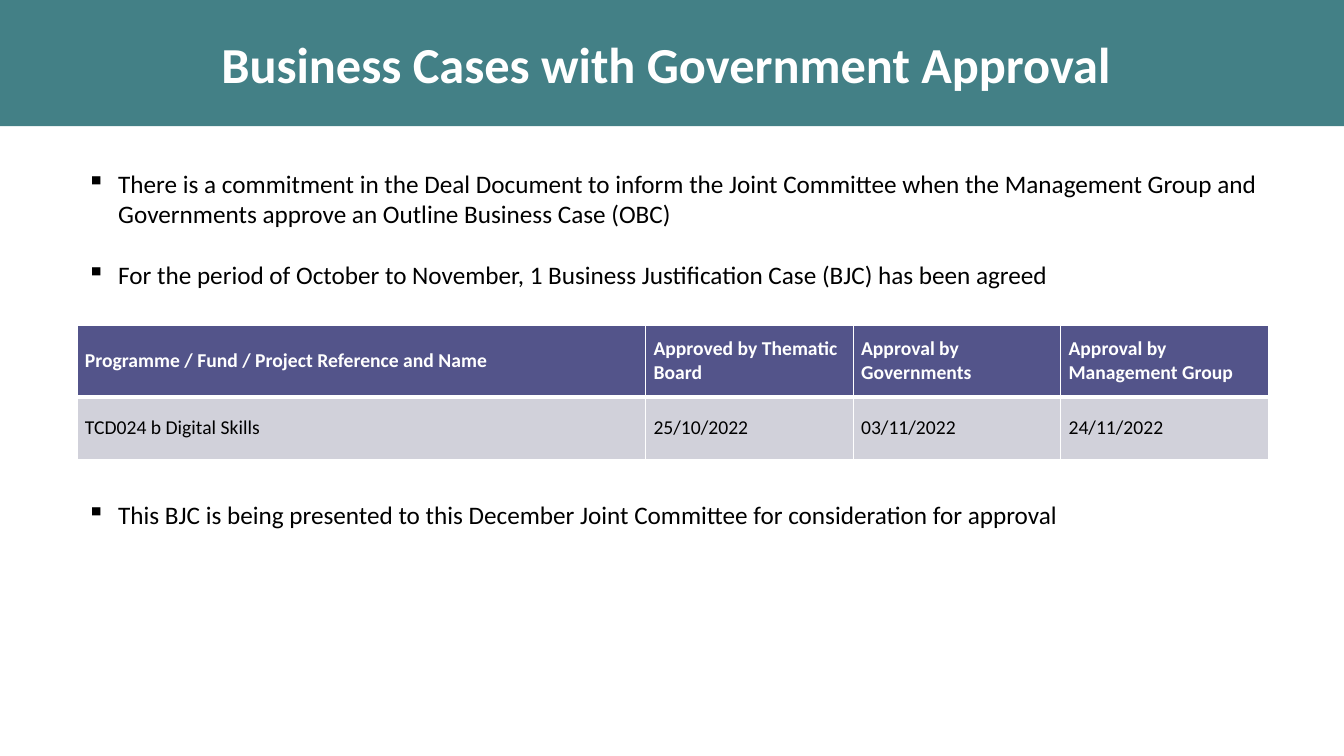
from lxml import etree
from pptx import Presentation
from pptx.dml.color import RGBColor
from pptx.enum.shapes import MSO_SHAPE
from pptx.enum.text import MSO_ANCHOR, PP_ALIGN
from pptx.oxml.ns import qn
from pptx.util import Cm, Pt

RECTANGLE = MSO_SHAPE.RECTANGLE
MIDDLE = MSO_ANCHOR.MIDDLE
LEFT, CENTER = PP_ALIGN.LEFT, PP_ALIGN.CENTER

TEAL = RGBColor(0x43, 0x80, 0x86)
INDIGO = RGBColor(0x53, 0x54, 0x8A)
LAVENDER = RGBColor(0xD1, 0xD1, 0xDA)
WHITE = RGBColor(0xFF, 0xFF, 0xFF)
BLACK = RGBColor(0, 0, 0)

FONT = "Calibri"
SLIDE_WIDTH, SLIDE_HEIGHT = Cm(33.87), Cm(19.05)
INDENT = Cm(0.79)

APPROVALS = [
    ["Programme / Fund / Project Reference and Name", "Approved by Thematic Board",
     "Approval by Governments", "Approval by Management Group"],
    ["TCD024 b Digital Skills", "25/10/2022", "03/11/2022", "24/11/2022"],
]
COLUMN_WIDTHS = [Cm(14.33)] + [Cm(5.23)] * 3
ROW_HEIGHTS = [Cm(1.8), Cm(1.58)]

POINTS = [
    ("There is a commitment in the Deal Document to inform the Joint Committee when the "
     "Management Group and Governments approve an Outline Business Case (OBC)", 0),
    ("For the period of October to November, 1 Business Justification Case (BJC) has been "
     "agreed", 22),
    ("This BJC is being presented to this December Joint Committee for consideration for "
     "approval", 150),
]


def write(paragraph, text, size=18, color=BLACK, bold=False, align=LEFT,
          bullet=None, space_before=0):
    if bullet:
        properties = paragraph._p.get_or_add_pPr()
        properties.set("marL", str(INDENT))
        properties.set("indent", str(-INDENT))
        etree.SubElement(properties, qn("a:buChar")).set("char", bullet)
    paragraph.alignment = align
    if space_before:
        paragraph.space_before = Pt(space_before)
    run = paragraph.add_run()
    run.text = text
    run.font.name = FONT
    run.font.size = Pt(size)
    run.font.bold = bold
    run.font.color.rgb = color


def set_borders(cell, bottom):
    properties = cell._tc.get_or_add_tcPr()
    for side, width in (("L", 1), ("R", 1), ("T", 1), ("B", bottom)):
        line = etree.SubElement(properties, qn(f"a:ln{side}"), w=str(Pt(width)))
        fill = etree.SubElement(line, qn("a:solidFill"))
        etree.SubElement(fill, qn("a:srgbClr"), val=str(WHITE))


def add_title_band(slide, left, top, width, height):
    band = slide.shapes.add_shape(RECTANGLE, left, top, width, height)
    band.shadow.inherit = False
    band.fill.solid()
    band.fill.fore_color.rgb = TEAL
    band.line.fill.background()
    band.text_frame.word_wrap = True
    band.text_frame.vertical_anchor = MIDDLE
    write(band.text_frame.paragraphs[0], "Business Cases with Government Approval ",
          size=36, color=WHITE, bold=True, align=CENTER)


def add_approvals(slide, left, top):
    approvals = slide.shapes.add_table(
        len(APPROVALS), len(COLUMN_WIDTHS), left, top,
        sum(COLUMN_WIDTHS), sum(ROW_HEIGHTS)).table
    approvals.horz_banding = False
    for column, width in zip(approvals.columns, COLUMN_WIDTHS):
        column.width = width
    for row_index, (row, height) in enumerate(zip(approvals.rows, ROW_HEIGHTS)):
        row.height = height
        is_header = row_index == 0
        for cell, text in zip(row.cells, APPROVALS[row_index]):
            set_borders(cell, bottom=3 if is_header else 1)
            cell.fill.solid()
            cell.fill.fore_color.rgb = INDIGO if is_header else LAVENDER
            cell.vertical_anchor = MIDDLE
            cell.margin_left = cell.margin_right = Cm(0.2)
            cell.margin_top = cell.margin_bottom = Cm(0.1)
            write(cell.text_frame.paragraphs[0], text, size=14,
                  color=WHITE if is_header else BLACK, bold=is_header)


def add_points(slide, left, top, width, height):
    frame = slide.shapes.add_textbox(left, top, width, height).text_frame
    frame.word_wrap = True
    for index, (text, space_before) in enumerate(POINTS):
        paragraph = frame.add_paragraph() if index else frame.paragraphs[0]
        write(paragraph, text, bullet="▪", space_before=space_before)


def main():
    presentation = Presentation()
    presentation.slide_width = SLIDE_WIDTH
    presentation.slide_height = SLIDE_HEIGHT
    slide = presentation.slides.add_slide(presentation.slide_layouts[6])
    margin = Cm(1.94)
    add_title_band(slide, 0, 0, SLIDE_WIDTH, Cm(3.18))
    add_approvals(slide, margin, Cm(8.2))
    add_points(slide, margin, Cm(4.11), Cm(30.56), Cm(14.1))
    presentation.save("out.pptx")


if __name__ == "__main__":
    main()
